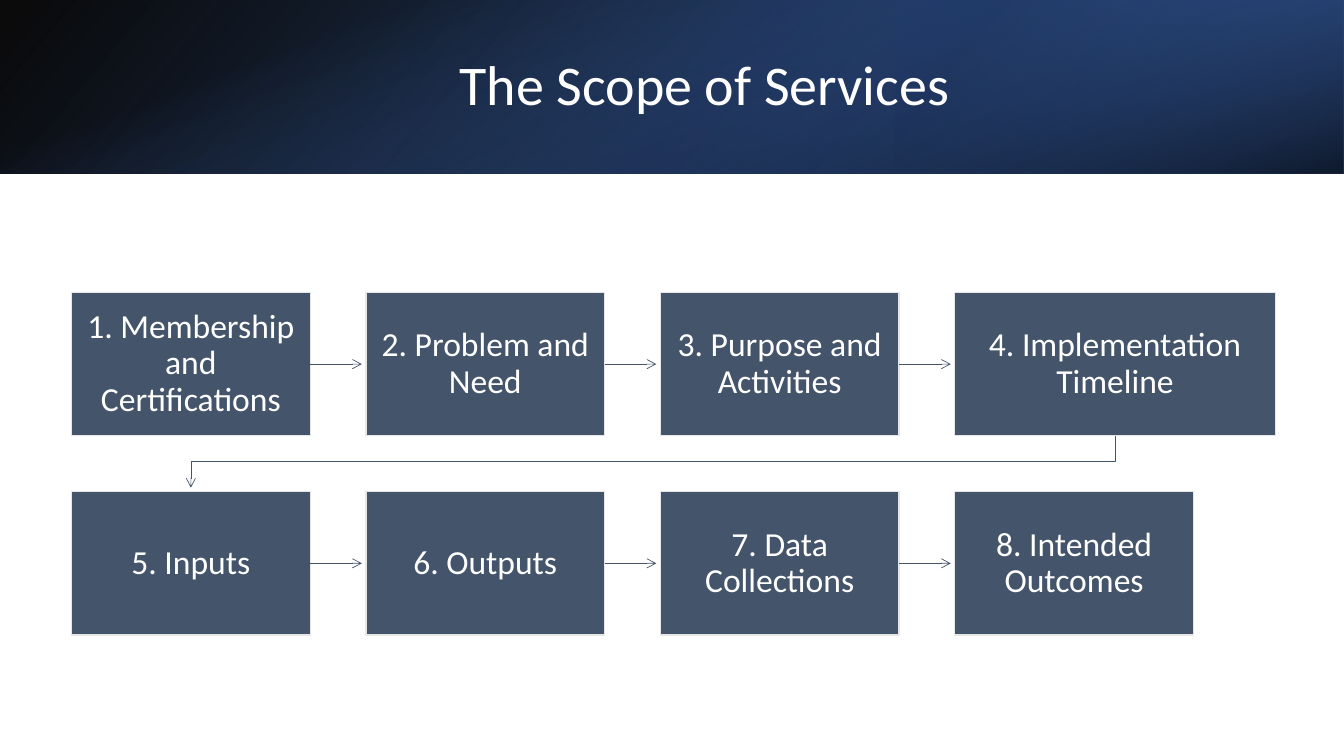
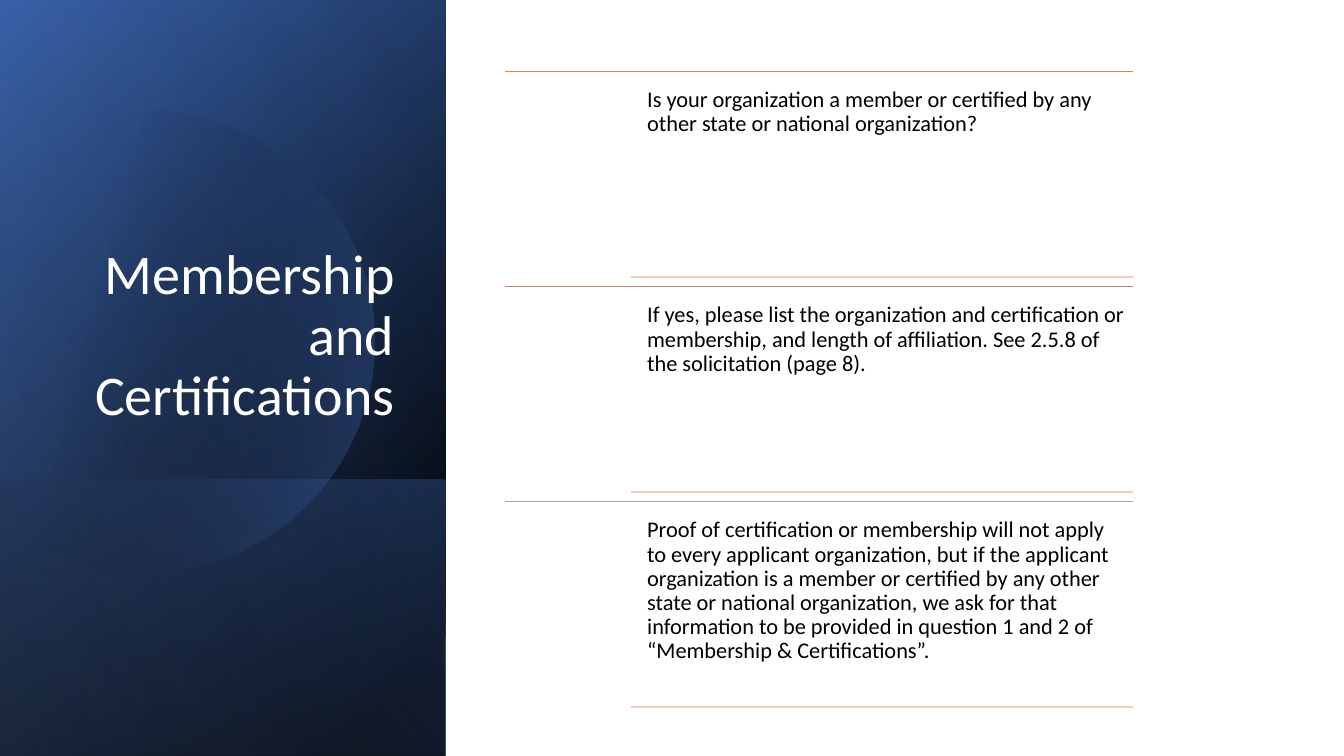
from math import acos, cos, sin

from lxml.etree import SubElement
from pptx import Presentation
from pptx.dml.color import RGBColor
from pptx.enum.shapes import MSO_CONNECTOR as Link, MSO_SHAPE as Preset
from pptx.enum.text import MSO_ANCHOR as Anchor, PP_ALIGN as Align
from pptx.oxml import parse_xml
from pptx.oxml.ns import nsdecls, qn
from pptx.util import Cm, Pt

BLACK = RGBColor(0x00, 0x00, 0x00)
WHITE = RGBColor(0xFF, 0xFF, 0xFF)
NAVY = RGBColor(0x20, 0x38, 0x64)
DEEP_BLUE = RGBColor(0x2F, 0x55, 0x97)
BLUE = RGBColor(0x44, 0x72, 0xC4)
PALE_BLUE = RGBColor(0x8F, 0xAA, 0xDC)
SLATE = RGBColor(0x44, 0x54, 0x6A)
LIGHT_GRAY = RGBColor(0xE7, 0xE6, 0xE6)
ORANGE = RGBColor(0xED, 0x7D, 0x31)
CLAY = RGBColor(0xC4, 0x81, 0x70)
GRAY = RGBColor(0xA5, 0xA5, 0xA5)
PEACH = RGBColor(0xF6, 0xCC, 0xBE)

FONT = "Calibri"
SLIDE_W, SLIDE_H = 33.87, 19.05
BAND_H = 4.37
SIDEBAR_W = 11.23
TITLE = {"size": 40, "color": WHITE, "inset": 0.25}
STEP = {"size": 24, "color": WHITE, "inset": 0.3, "anchor": Anchor.MIDDLE, "align": Align.CENTER}
QUESTION = {"size": 16, "color": BLACK, "inset": 0.18, "anchor": Anchor.TOP, "align": Align.LEFT}

STEPS = [
    ["1. Membership and Certifications", "2. Problem and Need",
     "3. Purpose and Activities", "4. Implementation Timeline"],
    ["5. Inputs", "6. Outputs", "7. Data Collections", "8. Intended Outcomes"],
]
QUESTIONS = [
    (ORANGE, "Is your organization a member or certified by any other state or "
             "national organization?"),
    (CLAY, "If yes, please list the organization and certification or membership, "
           "and length of affiliation. See 2.5.8 of the solicitation (page 8)."),
    (GRAY, "Proof of certification or membership will not apply to every applicant "
           "organization, but if the applicant organization is a member or certified "
           "by any other state or national organization, we ask for that information "
           "to be provided in question 1 and 2 of “Membership & Certifications”."),
]


def write(shape, text, style):
    frame = shape.text_frame
    inset = Cm(style["inset"])
    settings = {"word_wrap": True, "vertical_anchor": style["anchor"],
                "margin_left": inset, "margin_right": inset,
                "margin_top": inset, "margin_bottom": inset}
    for name, value in settings.items():
        setattr(frame, name, value)
    paragraph = frame.paragraphs[0]
    paragraph.alignment = style["align"]
    paragraph.line_spacing = 0.9
    run = paragraph.add_run()
    run.text = text
    for name, value in {"name": FONT, "size": Pt(style["size"])}.items():
        setattr(run.font, name, value)
    run.font.color.rgb = style["color"]


def add_text(slide, box, text, style):
    write(slide.shapes.add_textbox(*map(Cm, box)), text, style)


def add_title(slide, box, text, anchor, align):
    add_text(slide, box, text, {**TITLE, "anchor": anchor, "align": align})


def set_gradient(shape, stops, angle):
    shape.shadow.inherit = False
    shape.line.fill.background()
    shape.fill.background()
    marks = "".join(
        f'<a:gs pos="{place * 1000}"><a:srgbClr val="{color}">'
        f'<a:alpha val="{opacity * 1000}"/></a:srgbClr></a:gs>'
        for place, color, opacity in stops)
    gradient = parse_xml(
        f'<a:gradFill {nsdecls("a")} rotWithShape="1"><a:gsLst>{marks}</a:gsLst>'
        f'<a:lin ang="{angle * 60000}" scaled="0"/></a:gradFill>')
    properties = shape._element.spPr
    properties.replace(properties.find(qn("a:noFill")), gradient)


def add_glow(slide, box, stops, angle, turn=0, flip=True):
    left, top, width, height = box
    if turn == 90:
        left, top = left + (width - height) / 2, top + (height - width) / 2
        width, height = height, width
    glow = slide.shapes.add_shape(Preset.RECTANGLE, *map(Cm, (left, top, width, height)))
    glow.rotation = turn
    if flip:
        glow._element.spPr.xfrm.set("flipH", "1")
    set_gradient(glow, stops, angle)


def add_line(slide, start, end, color, width, kind=Link.STRAIGHT, arrow=False):
    line = slide.shapes.add_connector(kind, *map(Cm, (*start, *end)))
    line.line.color.rgb = color
    line.line.width = Pt(width)
    if arrow:
        SubElement(line.line._get_or_add_ln(), qn("a:tailEnd"), type="arrow")
    SubElement(line._element.spPr, qn("a:effectLst"))
    return line


def add_band(slide, box):
    left, top, width, height = box
    add_glow(slide, box, [(0, BLACK, 96), (100, DEEP_BLUE, 100)], 140)
    add_glow(slide, (left + width * 2 / 3, top, width / 3, height),
             [(19, NAVY, 68), (100, BLUE, 79)], 320, turn=180)
    add_glow(slide, box, [(23, BLUE, 0), (99, BLACK, 74)], 340, turn=90, flip=False)
    add_title(slide, (left + 3.81, top + 0.97, 27.89, 2.44), "The Scope of Services",
              Anchor.MIDDLE, Align.CENTER)


def add_step(slide, box, text):
    step = slide.shapes.add_shape(Preset.RECTANGLE, *map(Cm, box))
    step.shadow.inherit = False
    step.fill.solid()
    step.fill.fore_color.rgb = SLATE
    step.line.color.rgb = LIGHT_GRAY
    step.line.width = Pt(1)
    write(step, text, STEP)
    return step


def add_return_arrow(slide, start, end):
    run, drop = start[0] - end[0], end[1] - start[1]
    middle_x, middle_y = (start[0] + end[0]) / 2, (start[1] + end[1]) / 2
    arrow = add_line(slide, (middle_x - drop / 2, middle_y - run / 2),
                     (middle_x + drop / 2, middle_y + run / 2),
                     SLATE, 0.5, Link.ELBOW, arrow=True)
    arrow._element.spPr.xfrm.set("rot", "5400000")


def add_process(slide, box):
    left, top, width, height = box
    step_w, step_h, pitch, reach = 6.02, 3.61, 7.42, 1.3
    row_pitch = height - step_h
    wide_w = width - 3 * pitch
    for row, labels in enumerate(STEPS):
        y = top + row * row_pitch
        for column, label in enumerate(labels):
            x = left + column * pitch
            is_wide = row == 0 and column == 3
            step = add_step(slide, (x, y, wide_w if is_wide else step_w, step_h), label)
            if column < 3:
                side, middle = x + step_w, y + step_h / 2
                arrow = add_line(slide, (side, middle), (side + reach, middle),
                                 SLATE, 0.5, arrow=True)
                arrow.begin_connect(step, 3)
    add_return_arrow(slide, (left + 3 * pitch + wide_w / 2, top + step_h),
                     (left + step_w / 2, top + row_pitch - 0.1))


def add_disc(slide, box):
    left, top = box[:2]
    center_x, center_y, radius, parts = 3.61, 8.59, 5.84, 90
    limit = acos(-center_x / radius)
    angles = [limit * (2 * part / parts - 1) for part in range(parts + 1)]
    points = [(Cm(left + center_x + radius * cos(angle)),
               Cm(top + center_y + radius * sin(angle))) for angle in angles]
    outline = slide.shapes.build_freeform(*points[0])
    outline.add_line_segments(points[1:], close=True)
    set_gradient(outline.convert_to_shape(), [(29, BLACK, 0), (100, BLUE, 43)], 14)


def add_sidebar(slide, box):
    left, top, width, height = box
    foot_h = 6.96
    add_glow(slide, box, [(8, BLACK, 100), (100, DEEP_BLUE, 100)], 50, turn=90)
    add_glow(slide, box, [(0, BLACK, 0), (99, BLUE, 46)], 30, turn=90)
    add_glow(slide, (left, top + height - foot_h, width, foot_h),
             [(2, BLUE, 29), (100, BLACK, 30)], 130, turn=90)
    add_disc(slide, box)
    add_glow(slide, box, [(0, BLACK, 0), (99, PALE_BLUE, 11)], 120, turn=90)
    add_title(slide, (left + 1.3, top + 1.63, 8.89, 9.4), "Membership and Certifications",
              Anchor.BOTTOM, Align.RIGHT)


def add_questions(slide, box):
    left, top, width, height = box
    right, pitch = left + width, height / len(QUESTIONS)
    for row, (color, question) in enumerate(QUESTIONS):
        y = top + row * pitch
        add_line(slide, (left, y), (right, y), color, 1)
        add_text(slide, (left + 3.4, y + 0.25, width - 3.4, 4.93), question, QUESTION)
        add_line(slide, (left + 3.17, y + 5.18), (right, y + 5.18), PEACH, 1)


def main():
    deck = Presentation()
    deck.slide_width, deck.slide_height = Cm(SLIDE_W), Cm(SLIDE_H)
    blank = deck.slide_layouts[6]

    scope = deck.slides.add_slide(blank)
    add_band(scope, (0, 0, SLIDE_W, BAND_H))
    add_process(scope, (1.8, 7.37, 30.34, 8.63))

    membership = deck.slides.add_slide(blank)
    add_sidebar(membership, (0, 0, SIDEBAR_W, SLIDE_H))
    add_questions(membership, (12.73, 1.8, 15.82, 16.26))

    deck.save("out.pptx")


if __name__ == "__main__":
    main()
